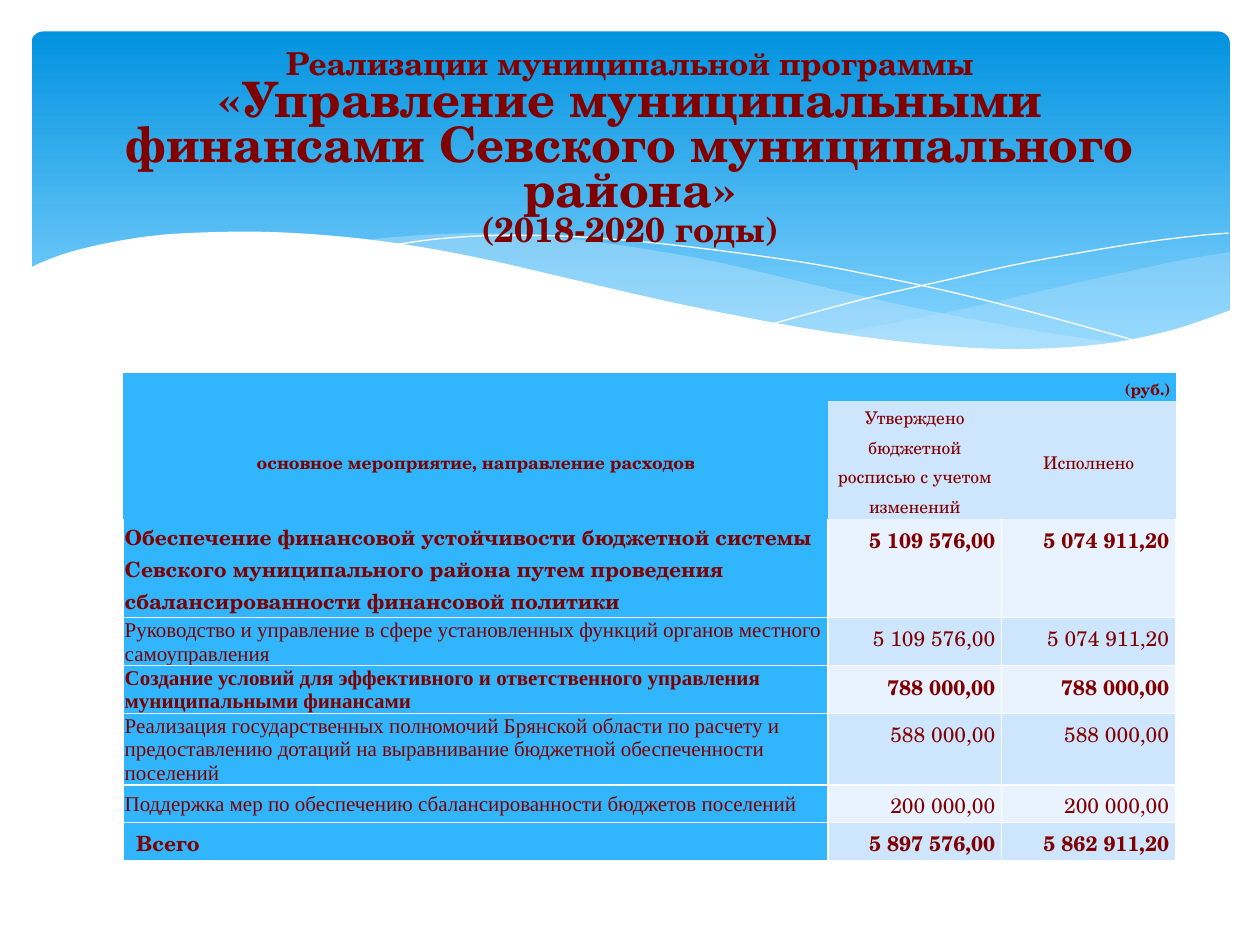
from pptx import Presentation
from pptx.dml.color import RGBColor
from pptx.enum.shapes import MSO_SHAPE
from pptx.enum.text import MSO_ANCHOR, PP_ALIGN
from pptx.oxml.ns import qn
from pptx.util import Inches, Pt
from lxml import etree

ROUNDED = MSO_SHAPE.ROUNDED_RECTANGLE
TOP, MIDDLE, BOTTOM = MSO_ANCHOR.TOP, MSO_ANCHOR.MIDDLE, MSO_ANCHOR.BOTTOM
LEFT, CENTER, RIGHT, JUSTIFY = PP_ALIGN.LEFT, PP_ALIGN.CENTER, PP_ALIGN.RIGHT, PP_ALIGN.JUSTIFY

THEME = {
    "serif": "TeX Gyre Schola", "plain": "Times New Roman",
    "text": "800000", "white": "FFFFFF", "mist": "C6E7FC",
    "sky_top": "0293E0", "sky_bottom": "83D3FE",
    "label": "31B6FD", "band_dark": "CEE5FE", "band_light": "E8F3FF",
    "unit_size": 9, "header_size": 10, "body_size": 12,
}

TITLE = [
    ("Реализации муниципальной программы", 18),
    ("«Управление муниципальными финансами Севского муниципального района»", 27.9),
    ("(2018-2020 годы)", 19.8),
]
UNIT = "(руб.)"
HEADERS = ["основное мероприятие, направление расходов",
           "Утверждено бюджетной росписью с учетом изменений", "Исполнено"]
# label, approved, executed, label font, label bold, amounts bold, label anchor
EXPENSES = [
    ("Обеспечение финансовой устойчивости бюджетной системы Севского муниципального района "
     "путем проведения сбалансированности финансовой политики",
     "5 109 576,00", "5 074 911,20", "serif", True, True, MIDDLE),
    ("Руководство и управление в сфере установленных функций органов местного самоуправления",
     "5 109 576,00", "5 074 911,20", "plain", False, False, MIDDLE),
    ("Создание условий для эффективного и ответственного управления муниципальными финансами",
     "788 000,00", "788 000,00", "plain", True, True, BOTTOM),
    ("Реализация государственных полномочий Брянской области по расчету и предоставлению "
     "дотаций на выравнивание бюджетной обеспеченности поселений",
     "588 000,00", "588 000,00", "plain", False, False, MIDDLE),
    ("Поддержка мер по обеспечению сбалансированности бюджетов поселений",
     "200 000,00", "200 000,00", "plain", False, False, MIDDLE),
    ("Всего", "5 897 576,00", "5 862 911,20", "serif", True, True, TOP),
]
COLUMN_WIDTHS = [5.59, 1.38, 1.38]
ROW_HEIGHTS = [0.22, 0.94, 0.78, 0.38, 0.38, 0.56, 0.3, 0.3]

# Each outline is a list of smooth curves joined by corners: (curves, fill, opacity %)
WAVES = [
    ([[(9.76, 2), (9.35, 2.07), (8.61, 2.23), (7.79, 2.42), (7.06, 2.57), (6.61, 2.65)],
      [(6.61, 2.65), (7.05, 2.71), (7.57, 2.76), (8.03, 2.78), (8.54, 2.76), (8.97, 2.7),
       (9.35, 2.62), (9.76, 2.47)]], "mist", 29),
    ([[(8.93, 2.73), (8.37, 2.65), (7.75, 2.54), (7.06, 2.4), (6.29, 2.22), (5.69, 2.08),
       (5.14, 1.98), (4.65, 1.91), (4.2, 1.87), (3.8, 1.85), (3.28, 1.87), (2.86, 1.91)],
      [(2.86, 1.91), (3.42, 1.99), (4.04, 2.11), (4.49, 2.22), (5.3, 2.4), (6.01, 2.55),
       (6.65, 2.66), (7.22, 2.74), (7.73, 2.77), (8.18, 2.78), (8.57, 2.77), (8.93, 2.73)]],
     "mist", 40),
]
RIPPLES = [
    [(3.09, 1.95), (3.44, 1.9), (3.87, 1.87), (4.33, 1.87), (4.89, 1.9), (5.56, 1.97),
     (6.36, 2.08), (6.95, 2.19), (7.6, 2.33), (8.31, 2.51), (9.07, 2.72)],
    [(6.13, 2.57), (6.53, 2.46), (6.95, 2.35), (7.48, 2.23), (8.06, 2.1), (8.66, 1.99),
     (9.1, 1.92), (9.51, 1.87), (9.75, 1.85)],
]
FOREGROUND = ([[(9.77, 2.46), (9.3, 2.62), (8.75, 2.73), (8.09, 2.77), (7.44, 2.74), (6.68, 2.65),
                (6.03, 2.54), (5.29, 2.39), (4.47, 2.2), (3.91, 2.07), (3.4, 1.97), (2.92, 1.9),
                (2.5, 1.86), (2.11, 1.84), (1.77, 1.84), (1.32, 1.86), (0.95, 1.91),
                (0.59, 1.99), (0.36, 2.07), (0.23, 2.13)],
               [(0.23, 3.29), (9.77, 3.29)]], "white", 100)


def color(name):
    return RGBColor.from_string(THEME[name])


def smooth(points, steps=5):
    """Return points along a Catmull-Rom curve through the given points."""
    padded = [points[0], *points, points[-1]]
    curve = [points[0]]
    for a, b, c, d in zip(padded, padded[1:], padded[2:], padded[3:]):
        for step in range(1, steps + 1):
            t = step / steps
            curve.append(tuple(
                0.5 * (2 * q + (r - p) * t + (2 * p - 5 * q + 4 * r - s) * t ** 2
                       + (3 * q - p - 3 * r + s) * t ** 3)
                for p, q, r, s in zip(a, b, c, d)))
    return curve


def add_outline(slide, curves, closed):
    points = [(Inches(x), Inches(y)) for curve in curves for x, y in smooth(curve)]
    builder = slide.shapes.build_freeform(*points[0])
    builder.add_line_segments(points[1:], close=closed)
    shape = builder.convert_to_shape()
    shape.shadow.inherit = False
    return shape


def add_wave(slide, curves, fill, opacity):
    shape = add_outline(slide, curves, True)
    shape.fill.solid()
    shape.fill.fore_color.rgb = color(fill)
    shape.line.fill.background()
    if opacity < 100:
        scheme = shape.fill._xPr.find(".//" + qn("a:srgbClr"))
        etree.SubElement(scheme, qn("a:alpha"), val=str(opacity * 1000))


def add_ripple(slide, curve):
    shape = add_outline(slide, [curve], False)
    shape.fill.background()
    shape.line.color.rgb = color("white")
    shape.line.width = Pt(0)


def add_sky(slide):
    sky = slide.shapes.add_shape(ROUNDED, Inches(0.25), Inches(0.25), Inches(9.51), Inches(2.7))
    sky.adjustments[0] = 0.034
    sky.shadow.inherit = False
    sky.line.fill.background()
    sky.fill.gradient()
    sky.fill.gradient_angle = 270
    for stop, name, position in zip(sky.fill.gradient_stops, ("sky_top", "sky_bottom"), (0, 0.9)):
        stop.color.rgb = color(name)
        stop.position = position


def add_run(paragraph, text, size, bold, font="serif"):
    run = paragraph.add_run()
    run.text = text
    run.font.size, run.font.bold = Pt(size), bold
    run.font.name = THEME[font]
    run.font.color.rgb = color("text")


def add_title(slide):
    frame = slide.shapes.add_textbox(Inches(0.5), Inches(0.37), Inches(9), Inches(1.65)).text_frame
    frame.word_wrap = True
    frame.vertical_anchor = MIDDLE
    paragraph = frame.paragraphs[0]
    paragraph.alignment = CENTER
    paragraph.line_spacing = 0.77
    for index, (text, size) in enumerate(TITLE):
        if index:
            paragraph.add_line_break()
        add_run(paragraph, text, size, True)


def set_borders(cell, white_sides):
    properties = cell._tc.get_or_add_tcPr()
    for side in "LRTB":
        line = etree.SubElement(properties, qn("a:ln" + side), w=str(Pt(1)))
        if side in white_sides:
            fill = etree.SubElement(line, qn("a:solidFill"))
            etree.SubElement(fill, qn("a:srgbClr"), val=THEME["white"])
        else:
            etree.SubElement(line, qn("a:noFill"))


def fill_cell(cell, text, fill, size, bold, alignment, anchor=TOP, font="serif",
              margins=(0.05, 0, 0.05, 0), spacing=1.15, borders=""):
    set_borders(cell, borders)
    cell.fill.solid()
    cell.fill.fore_color.rgb = color(fill)
    cell.margin_left, cell.margin_top, cell.margin_right, cell.margin_bottom = map(Inches, margins)
    cell.vertical_anchor = anchor
    paragraph = cell.text_frame.paragraphs[0]
    paragraph.alignment = alignment
    if spacing:
        paragraph.line_spacing = spacing
    add_run(paragraph, text, size, bold, font)


def add_budget_table(slide):
    table = slide.shapes.add_table(len(ROW_HEIGHTS), len(COLUMN_WIDTHS), Inches(0.98), Inches(2.96),
                                   Inches(sum(COLUMN_WIDTHS)), Inches(sum(ROW_HEIGHTS))).table
    table.first_row = table.horz_banding = False
    for column, width in zip(table.columns, COLUMN_WIDTHS):
        column.width = Inches(width)
    for row, height in zip(table.rows, ROW_HEIGHTS):
        row.height = Inches(height)

    header_margins = (0.04, 0, 0.04, 0)
    table.cell(0, 0).merge(table.cell(0, 2))
    fill_cell(table.cell(0, 0), UNIT, "label", THEME["unit_size"], True, RIGHT,
              margins=header_margins)
    for index, text in enumerate(HEADERS):
        fill_cell(table.cell(1, index), text, "band_dark" if index else "label",
                  THEME["header_size"], not index, CENTER, MIDDLE, margins=header_margins)

    size = THEME["body_size"]
    for row, (label, *amounts, font, label_bold, bold, anchor) in enumerate(EXPENSES, 2):
        borders = "LRB" if row == 2 else "LRTB"
        is_total = row == len(ROW_HEIGHTS) - 1
        fill_cell(table.cell(row, 0), label, "label", size, label_bold,
                  JUSTIFY if is_total else LEFT, anchor, font,
                  (0.1, 0, 0.05, 0) if is_total else (0.01, 0.01, 0.01, 0),
                  1.15 if is_total else None, borders)
        band = "band_dark" if row % 2 or is_total else "band_light"
        for column, amount in enumerate(amounts, 1):
            fill_cell(table.cell(row, column), amount, band, size, bold, RIGHT, borders=borders)


def main():
    presentation = Presentation()
    presentation.slide_width, presentation.slide_height = Inches(10), Inches(7.5)
    slide = presentation.slides.add_slide(presentation.slide_layouts[6])
    add_sky(slide)
    for wave in WAVES:
        add_wave(slide, *wave)
    for ripple in RIPPLES:
        add_ripple(slide, ripple)
    add_wave(slide, *FOREGROUND)
    add_budget_table(slide)
    add_title(slide)
    presentation.save("out.pptx")


if __name__ == "__main__":
    main()
